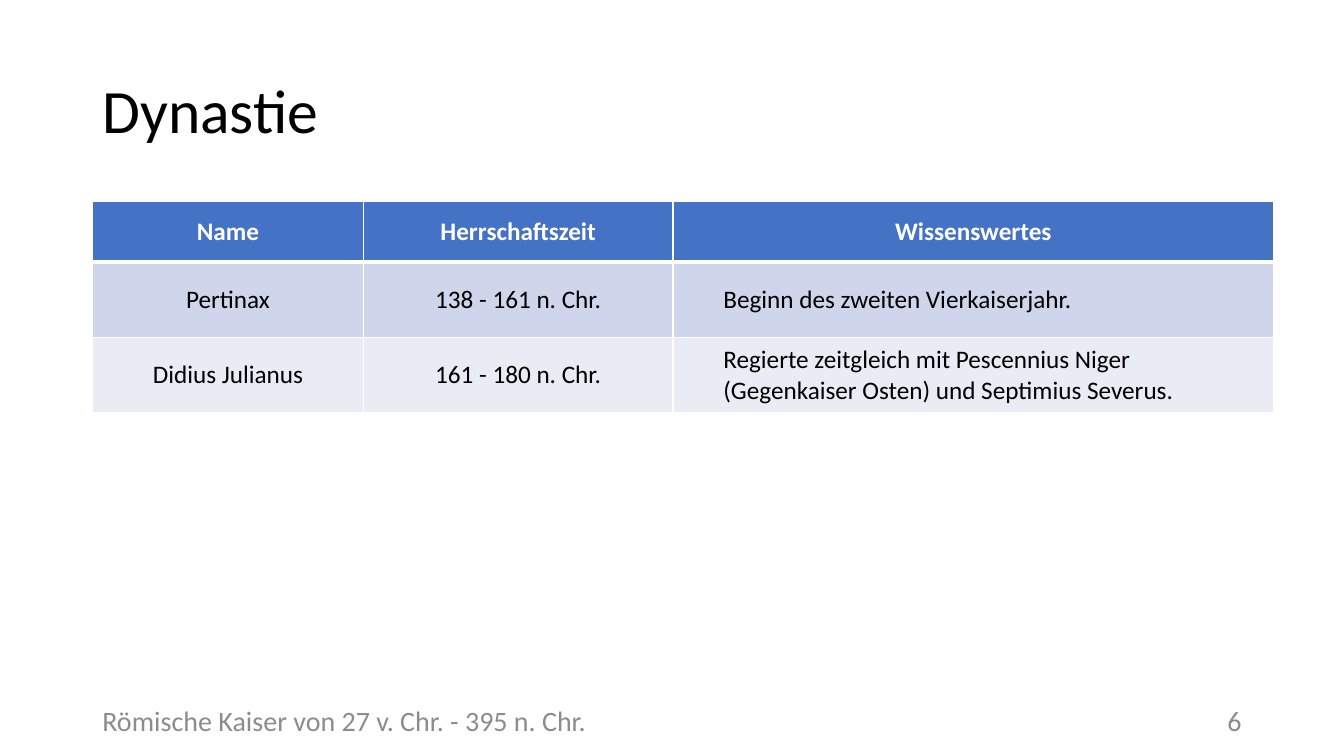
from dataclasses import dataclass

from lxml.etree import SubElement
from pptx import Presentation
from pptx.dml.color import RGBColor
from pptx.enum.text import MSO_ANCHOR as Anchor, PP_ALIGN as Align
from pptx.oxml.ns import qn
from pptx.util import Cm, Pt


@dataclass(frozen=True)
class Theme:
    font: str = "Calibri"
    ink: str = "000000"
    paper: str = "FFFFFF"
    muted: str = "8C8C8C"
    header: str = "4472C4"
    bands: tuple = ("CFD5EA", "E9EBF5")
    title_size: int = 44
    table_size: int = 18
    footer_size: int = 20
    thin: int = 1
    thick: int = 3


class PageBuilder:
    def __init__(self, page, theme):
        self.page = page
        self.theme = theme

    def fill_frame(self, frame, text, size, color, align=Align.LEFT, bold=False):
        para = frame.paragraphs[0]
        para.alignment = align
        for index, line in enumerate(text.split("\n")):
            if index:
                para.add_line_break()
            span = para.add_run()
            span.text = line
            span.font.name = self.theme.font
            span.font.size = Pt(size)
            span.font.bold = bold
            span.font.color.rgb = RGBColor.from_string(color)
        return para

    def text(self, left, top, width, height, text, size, color, align=Align.LEFT):
        box = self.page.shapes.add_textbox(Cm(left), Cm(top), Cm(width), Cm(height))
        frame = box.text_frame
        frame.word_wrap = True
        frame.vertical_anchor = Anchor.MIDDLE
        return self.fill_frame(frame, text, size, color, align)

    def border(self, cell, side, width):
        properties = cell._tc.get_or_add_tcPr()
        line = SubElement(properties, qn(f"a:ln{side}"), w=str(Pt(width)))
        fill = SubElement(line, qn("a:solidFill"))
        SubElement(fill, qn("a:srgbClr"), val=self.theme.paper)

    def cell(self, cell, text, row, column):
        theme = self.theme
        is_header = row == 0
        is_note = column == 2 and not is_header
        thick_side = {0: "B", 1: "T"}.get(row)
        for side in "LRTB":
            self.border(cell, side, theme.thick if side == thick_side else theme.thin)
        fill = theme.header if is_header else theme.bands[(row - 1) % len(theme.bands)]
        cell.fill.solid()
        cell.fill.fore_color.rgb = RGBColor.from_string(fill)
        cell.margin_left = cell.margin_right = 0
        cell.margin_top = cell.margin_bottom = 0
        cell.vertical_anchor = Anchor.MIDDLE
        para = self.fill_frame(
            cell.text_frame,
            text,
            theme.table_size,
            theme.paper if is_header else theme.ink,
            Align.LEFT if is_note else Align.CENTER,
            is_header,
        )
        if is_note:
            para.level = 1
            indent = para._p.get_or_add_pPr()
            indent.set("marL", str(Cm(1.27)))
            indent.set("indent", "0")

    def table(self, left, top, widths, heights, rows):
        table = self.page.shapes.add_table(
            len(heights), len(widths),
            Cm(left), Cm(top), Cm(sum(widths)), Cm(sum(heights)),
        ).table
        for column, width in zip(table.columns, widths):
            column.width = Cm(width)
        for row, height in zip(table.rows, heights):
            row.height = Cm(height)
        for row, texts in enumerate(rows):
            for column, text in enumerate(texts):
                self.cell(table.cell(row, column), text, row, column)


EMPERORS = [
    ("Name", "Herrschaftszeit", "Wissenswertes"),
    ("Pertinax", "138 - 161 n. Chr.", "Beginn des zweiten Vierkaiserjahr."),
    (
        "Didius Julianus",
        "161 - 180 n. Chr.",
        "Regierte zeitgleich mit Pescennius Niger\n"
        "(Gegenkaiser Osten) und Septimius Severus.",
    ),
]


def main():
    deck = Presentation()
    deck.slide_width, deck.slide_height = Cm(33.87), Cm(19.05)
    theme = Theme()
    builder = PageBuilder(deck.slides.add_slide(deck.slide_layouts[6]), theme)
    margin = 2.33
    footer_top, footer_height = 17.65, 1.02

    title = builder.text(margin, 1.02, 29.21, 3.68, "Dynastie", theme.title_size, theme.ink)
    title.line_spacing = 0.9
    builder.table(margin, 5.08, [6.83, 7.8, 15.14], [1.52, 1.9, 1.9], EMPERORS)
    builder.text(23.92, footer_top, 7.62, footer_height, "6",
                 theme.footer_size, theme.muted, Align.RIGHT)
    builder.text(margin, footer_top, 20.32, footer_height,
                 "Römische Kaiser von 27 v. Chr. - 395 n. Chr.",
                 theme.footer_size, theme.muted)
    deck.save("out.pptx")


if __name__ == "__main__":
    main()
